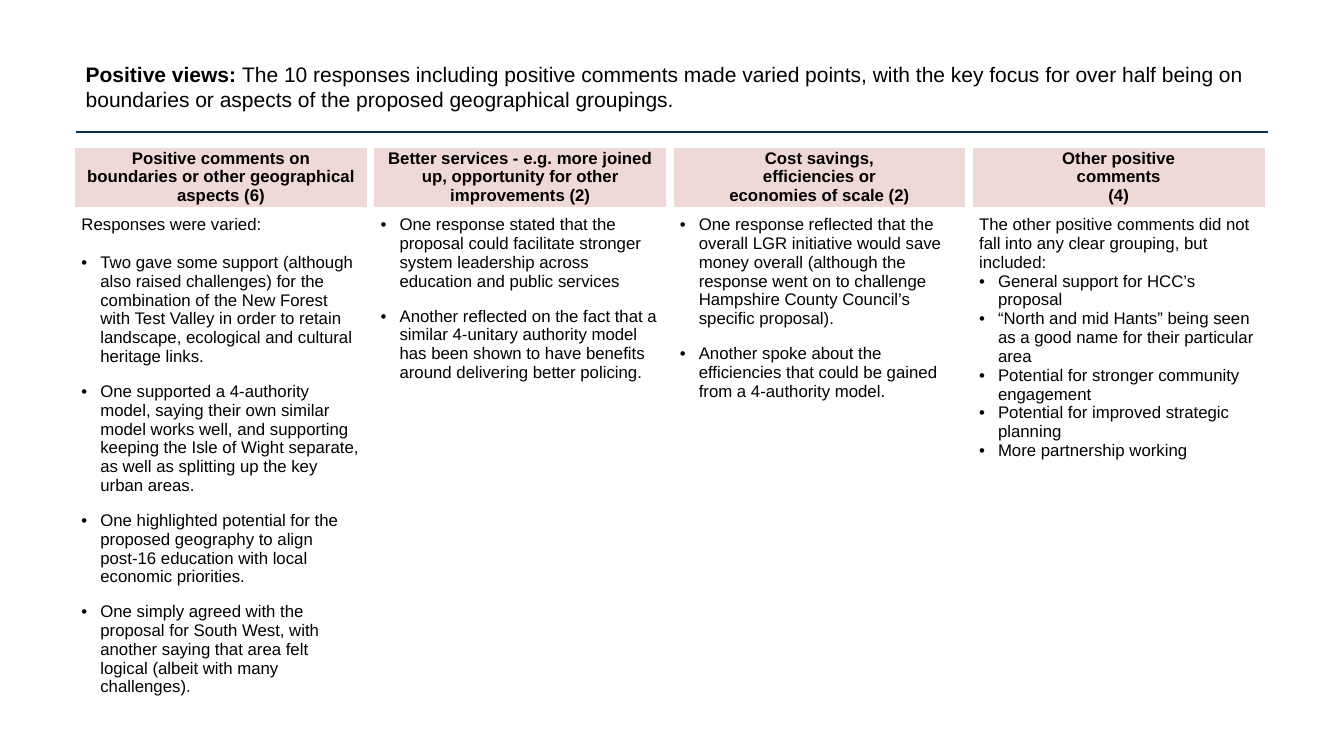
from dataclasses import dataclass

from lxml.etree import SubElement
from pptx import Presentation
from pptx.dml.color import RGBColor
from pptx.enum.shapes import MSO_CONNECTOR
from pptx.enum.text import MSO_ANCHOR, MSO_AUTO_SIZE, PP_ALIGN
from pptx.oxml.ns import qn
from pptx.util import Pt

PX = 9525  # EMU per px, 96 px to the inch


@dataclass(frozen=True)
class Theme:
    font: str = "Arial"
    ink: str = "000000"
    rule: str = "08324B"
    head: str = "EFD9D7"
    paper: str = "FFFFFF"
    lead: int = 15
    body: int = 12
    border: int = 6


@dataclass(frozen=True)
class Point:
    text: str
    gap: float = 0
    bullet: bool = True


COLUMNS = [
    (["Positive comments on", "boundaries or other geographical aspects (6)"],
     [Point("Responses were varied:", bullet=False),
      Point("Two gave some support (although also raised challenges) for the "
            "combination of the New Forest with Test Valley in order to retain "
            "landscape, ecological and cultural heritage links.", 13.5),
      Point("One supported a 4-authority model, saying their own similar model "
            "works well, and supporting keeping the Isle of Wight separate, as "
            "well as splitting up the key urban areas.", 11.5),
      Point("One highlighted potential for the proposed geography to align "
            "post-16 education with local economic priorities.", 11.5),
      Point("One simply agreed with the proposal for South West, with another "
            "saying that area felt logical (albeit with many challenges).", 11.5)]),
    (["Better services - e.g. more joined up, opportunity for other improvements (2)"],
     [Point("One response stated that the proposal could facilitate stronger "
            "system leadership across education and public services"),
      Point("Another reflected on the fact that a similar 4-unitary authority "
            "model has been shown to have benefits around delivering better "
            "policing.", 11.5)]),
    (["Cost savings,", "efficiencies or", "economies of scale (2)"],
     [Point("One response reflected that the overall LGR initiative would save "
            "money overall (although the response went on to challenge "
            "Hampshire County Council’s specific proposal)."),
      Point("Another spoke about the efficiencies that could be gained from a "
            "4-authority model.", 11.5)]),
    (["Other positive", "comments", "(4)"],
     [Point("The other positive comments did not fall into any clear grouping, "
            "but included:", bullet=False),
      Point("General support for HCC’s proposal"),
      Point("“North and mid Hants” being seen as a good name for their "
            "particular area"),
      Point("Potential for stronger community engagement"),
      Point("Potential for improved strategic planning"),
      Point("More partnership working")]),
]


class Deck:
    def __init__(self, theme, width, height):
        self.theme = theme
        self.deck = Presentation()
        self.deck.slide_width = width * PX
        self.deck.slide_height = height * PX
        self.slide = self.deck.slides.add_slide(self.deck.slide_layouts[5])

    def run(self, para, text, size, bold=False):
        run = para.add_run()
        run.text = text
        font = run.font
        font.name, font.size, font.bold = self.theme.font, Pt(size), bold
        font.color.rgb = RGBColor.from_string(self.theme.ink)

    def title(self, box, parts):
        shape = self.slide.shapes.title
        shape.left, shape.top, shape.width, shape.height = (n * PX for n in box)
        frame = shape.text_frame
        frame.word_wrap = True
        frame.auto_size = MSO_AUTO_SIZE.NONE
        frame.vertical_anchor = MSO_ANCHOR.BOTTOM
        para = frame.paragraphs[0]
        para.alignment = PP_ALIGN.LEFT
        for text, bold in parts:
            self.run(para, text, self.theme.lead, bold)

    def rule(self, left, right, y):
        line = self.slide.shapes.add_connector(
            MSO_CONNECTOR.STRAIGHT, left * PX, y * PX, right * PX, y * PX)
        line.line.color.rgb = RGBColor.from_string(self.theme.rule)
        line.line.width = Pt(1.25)
        SubElement(line._element.spPr, qn("a:effectLst"))

    def bullet(self, para, indent):
        props = para._p.get_or_add_pPr()
        props.set("marL", str(indent * PX))
        props.set("indent", str(-indent * PX))
        SubElement(props, qn("a:buFont"), typeface=self.theme.font)
        SubElement(props, qn("a:buChar"), char="•")

    def cell(self, cell, points, fill, head=False):
        props = cell._tc.get_or_add_tcPr()
        for side in ("lnL", "lnR", "lnT", "lnB"):
            edge = SubElement(props, qn(f"a:{side}"), w=str(Pt(self.theme.border)))
            paint = SubElement(edge, qn("a:solidFill"))
            SubElement(paint, qn("a:srgbClr"), val=self.theme.paper)
        cell.fill.solid()
        cell.fill.fore_color.rgb = RGBColor.from_string(fill)
        frame = cell.text_frame
        for i, point in enumerate(points):
            para = frame.add_paragraph() if i else frame.paragraphs[0]
            if point.bullet:
                self.bullet(para, 18)
            if point.gap:
                para.space_before = Pt(point.gap)
            para.alignment = PP_ALIGN.CENTER if head else PP_ALIGN.LEFT
            self.run(para, point.text, self.theme.body, head)

    def table(self, left, top, width, rows, columns):
        count = len(columns)
        table = self.slide.shapes.add_table(
            len(rows), count, left * PX, top * PX, width * count * PX,
            sum(rows) * PX).table
        table.horz_banding = False
        for row, height in zip(table.rows, rows):
            row.height = height * PX
        for i, (head, points) in enumerate(columns):
            table.columns[i].width = width * PX
            lines = [Point(text, bullet=False) for text in head]
            self.cell(table.cell(0, i), lines, self.theme.head, True)
            self.cell(table.cell(1, i), points, self.theme.paper)

    def save(self):
        self.deck.save("out.pptx")


def main():
    deck = Deck(Theme(), 1280, 720)
    deck.rule(72, 1208, 126)
    deck.title((72, 31, 1136, 80), [
        ("Positive views: ", True),
        ("The 10 responses including positive comments made varied points, with "
         "the key focus for over half being on boundaries or aspects of the "
         "proposed geographical groupings.", False)])
    deck.table(68, 137, 285, (59, 469), COLUMNS)
    deck.save()


if __name__ == "__main__":
    main()
